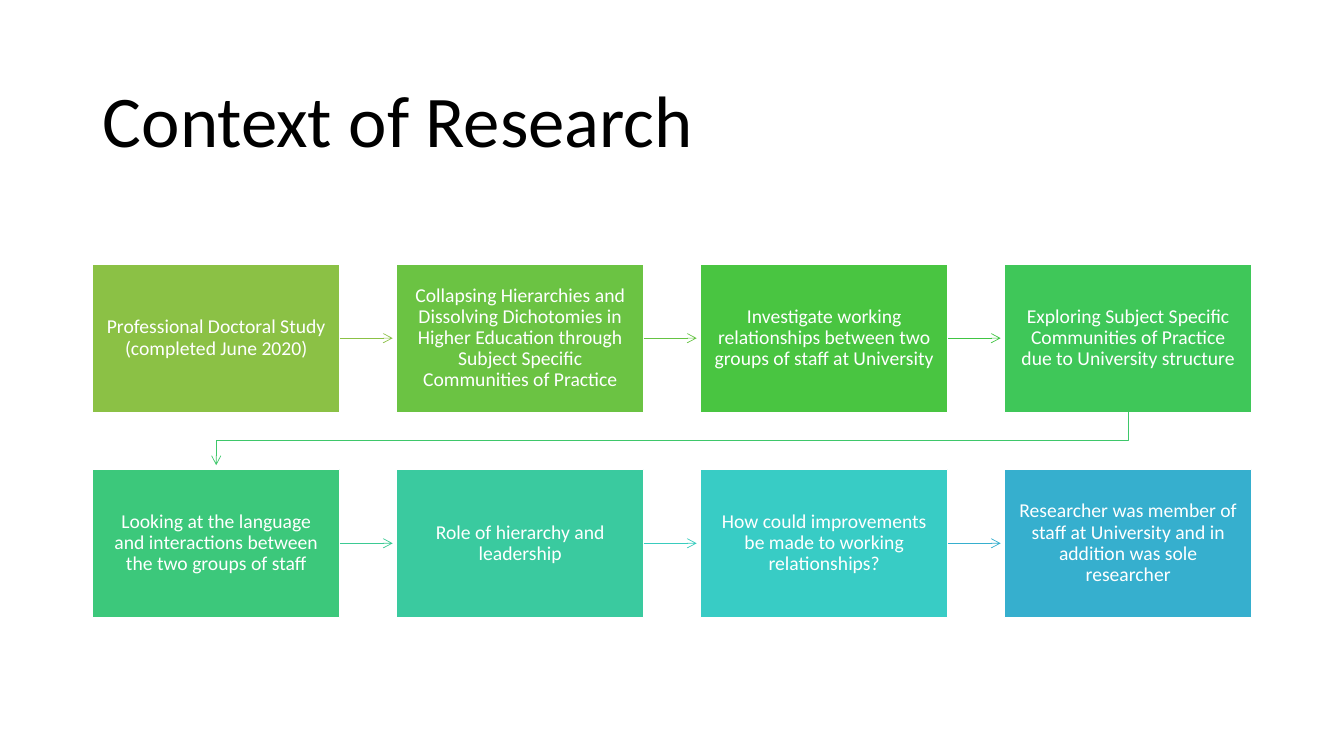
from dataclasses import dataclass

import lxml.etree
import pptx
import pptx.dml.color
import pptx.enum.shapes
import pptx.enum.text
import pptx.oxml.ns
import pptx.util

Inches = pptx.util.Inches
Pt = pptx.util.Pt


@dataclass(frozen=True)
class Theme:
    font: str = "Calibri"
    title_color: str = "000000"
    step_text: str = "FFFFFF"
    step_outline: str = "FFFFFF"
    title_size: float = 52
    step_size: float = 14
    outline_width: float = 1
    arrow_width: float = 0.5


THEME = Theme()

# Wording, box colour, colour of the arrow to the next step
STEPS = [
    ("Professional Doctoral Study (completed June 2020)", "8BC145", "8BC145"),
    ("Collapsing Hierarchies and Dissolving Dichotomies in Higher Education "
     "through Subject Specific Communities of Practice", "6BC343", "65C343"),
    ("Investigate working relationships between two groups of staff at University",
     "49C541", "40C543"),
    ("Exploring Subject Specific Communities of Practice due to University structure",
     "3FC759", "3EC76A"),
    ("Looking at the language and interactions between the two groups of staff",
     "3CC87B", "3BCA93"),
    ("Role of hierarchy and leadership", "3ACA9F", "39CCBE"),
    ("How could improvements be made to working relationships?", "38CCC5", "36AFCE"),
    ("Researcher was member of staff at University and in addition was sole researcher",
     "36AFCE", None),
]

COLUMNS = 4
GRID_LEFT, GRID_TOP = Inches(0.92), Inches(2.62)
STEP_WIDTH, STEP_HEIGHT = Inches(2.45), Inches(1.47)
PITCH_X, PITCH_Y = Inches(3.015), Inches(2.035)
ARROW_GAP = Inches(0.04)


def rgb(value):
    return pptx.dml.color.RGBColor.from_string(value)


def write(frame, wording, size, color, align, insets):
    horizontal, vertical = insets
    settings = {
        "word_wrap": True,
        "auto_size": pptx.enum.text.MSO_AUTO_SIZE.NONE,
        "vertical_anchor": pptx.enum.text.MSO_ANCHOR.MIDDLE,
        "margin_left": Inches(horizontal),
        "margin_right": Inches(horizontal),
        "margin_top": Inches(vertical),
        "margin_bottom": Inches(vertical),
    }
    for name, value in settings.items():
        setattr(frame, name, value)
    paragraph = frame.paragraphs[0]
    paragraph.alignment = align
    paragraph.line_spacing = 0.9
    run = paragraph.add_run()
    run.text = wording
    run.font.name = THEME.font
    run.font.size = Pt(size)
    run.font.color.rgb = rgb(color)


def set_title(slide, wording):
    title = slide.shapes.title
    place = {"left": 0.92, "top": 0.61, "width": 11.5, "height": 1.24}
    for name, value in place.items():
        setattr(title, name, Inches(value))
    write(title.text_frame, wording, THEME.title_size, THEME.title_color,
          pptx.enum.text.PP_ALIGN.LEFT, (0.1, 0.05))


def add_step(slide, index, wording, color):
    row, column = divmod(index, COLUMNS)
    step = slide.shapes.add_shape(
        pptx.enum.shapes.MSO_SHAPE.RECTANGLE,
        GRID_LEFT + column * PITCH_X, GRID_TOP + row * PITCH_Y,
        STEP_WIDTH, STEP_HEIGHT)
    step.shadow.inherit = False
    step.fill.solid()
    step.fill.fore_color.rgb = rgb(color)
    step.line.color.rgb = rgb(THEME.step_outline)
    step.line.width = Pt(THEME.outline_width)
    write(step.text_frame, wording, THEME.step_size, THEME.step_text,
          pptx.enum.text.PP_ALIGN.CENTER, (0.12, 0.13))
    return step


def style_arrow(arrow, color):
    arrow.line.color.rgb = rgb(color)
    arrow.line.width = Pt(THEME.arrow_width)
    qn = pptx.oxml.ns.qn
    properties = arrow.element.spPr
    lxml.etree.SubElement(properties.find(qn("a:ln")), qn("a:tailEnd"), type="arrow")
    if properties.find(qn("a:effectLst")) is None:
        lxml.etree.SubElement(properties, qn("a:effectLst"))


def add_arrow(slide, step, following, color):
    middle = step.top + step.height // 2
    arrow = slide.shapes.add_connector(
        pptx.enum.shapes.MSO_CONNECTOR.STRAIGHT,
        step.left + step.width, middle, following.left - ARROW_GAP, middle)
    arrow.begin_connect(step, 3)
    style_arrow(arrow, color)


def add_row_return(slide, step, following, color):
    """Bent arrow from the end of one row to the start of the next."""
    start_x = step.left + step.width // 2
    end_x = following.left + following.width // 2
    bottom = step.top + step.height
    turn = (bottom + following.top) // 2
    route = slide.shapes.build_freeform(start_x, bottom)
    route.add_line_segments(
        [(start_x, turn), (end_x, turn), (end_x, following.top - ARROW_GAP)],
        close=False)
    arrow = route.convert_to_shape()
    arrow.fill.background()
    style_arrow(arrow, color)


def main():
    deck = pptx.Presentation()
    deck.slide_width, deck.slide_height = Inches(13.33), Inches(7.5)
    slide = deck.slides.add_slide(deck.slide_layouts.get_by_name("Title Only"))
    set_title(slide, "Context of Research")
    steps = [add_step(slide, index, wording, color)
             for index, (wording, color, _) in enumerate(STEPS)]
    for step, following, (_, _, color) in zip(steps, steps[1:], STEPS):
        connect = add_arrow if step.top == following.top else add_row_return
        connect(slide, step, following, color)
    deck.save("out.pptx")


if __name__ == "__main__":
    main()
